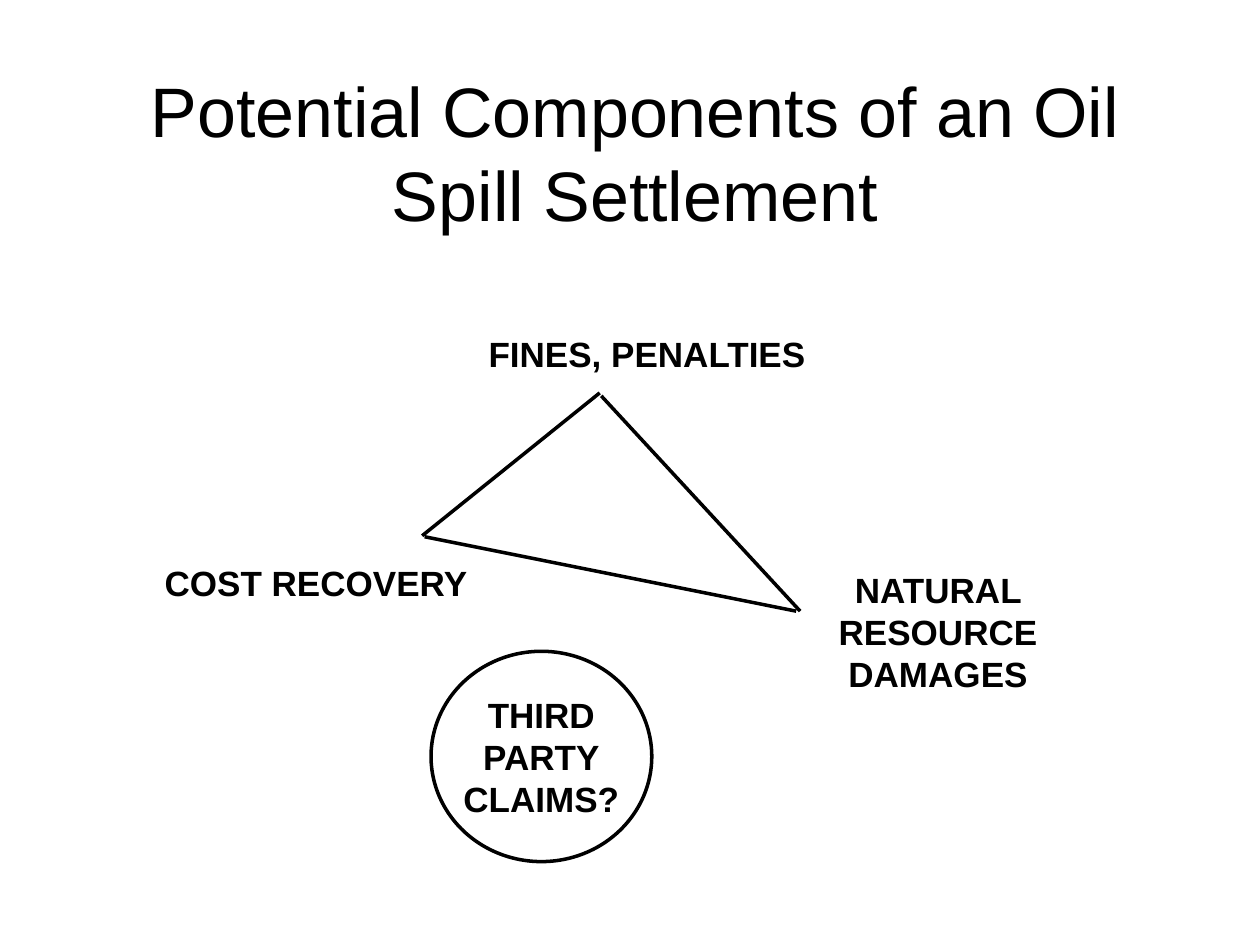
from dataclasses import dataclass

from lxml import etree
from pptx import Presentation
from pptx.dml.color import RGBColor
from pptx.enum.shapes import MSO_CONNECTOR, MSO_SHAPE
from pptx.enum.text import MSO_ANCHOR as Anchor, PP_ALIGN as Align
from pptx.oxml.ns import qn
from pptx.util import Cm, Pt


@dataclass(frozen=True)
class Theme:
    font: str = "Arial"
    ink: RGBColor = RGBColor(0, 0, 0)
    paper: RGBColor = RGBColor(255, 255, 255)
    title_size: Pt = Pt(40)
    label_size: Pt = Pt(20)
    line_width: Pt = Pt(2)


THEME = Theme()


def write_text(shape, lines, size, bold=True, align=Align.CENTER,
               anchor=Anchor.TOP, wrap=True):
    """Fill a shape with one paragraph per line, all in the same style."""
    frame = shape.text_frame
    frame.word_wrap = wrap
    frame.vertical_anchor = anchor
    frame.text = "\n".join(lines)
    for para in frame.paragraphs:
        para.alignment = align
        para.font.name = THEME.font
        para.font.size = size
        para.font.bold = bold
        para.font.color.rgb = THEME.ink


deck = Presentation()
deck.slide_width, deck.slide_height = Cm(25.4), Cm(19.05)
page = deck.slides.add_slide(deck.slide_layouts[6])
page.background.fill.solid()
page.background.fill.fore_color.rgb = THEME.paper

title = page.shapes.add_textbox(Cm(1.37), Cm(1.47), Cm(22.86), Cm(3.18))
write_text(title, ["Potential Components of an Oil Spill Settlement"],
           THEME.title_size, bold=False, anchor=Anchor.MIDDLE)

# Labels at the triangle's corners: text, left, top, width, height, align, wrap
corner_labels = [
    ("FINES, PENALTIES", 9.6, 6.58, 6.96, 1.09, Align.LEFT, False),
    ("COST RECOVERY", 3.07, 11.2, 6.63, 1.09, Align.LEFT, False),
    ("NATURAL RESOURCE DAMAGES", 15.01, 11.33, 7.8, 2.79, Align.CENTER, True),
]
for text, left, top, width, height, align, wrap in corner_labels:
    label = page.shapes.add_textbox(Cm(left), Cm(top), Cm(width), Cm(height))
    write_text(label, [text], THEME.label_size, align=align, wrap=wrap)

# Triangle sides: start x, start y, end x, end y
triangle_sides = [
    (12.09, 7.92, 8.51, 10.8),
    (12.12, 7.98, 16.13, 12.32),
    (8.56, 10.82, 16.05, 12.32),
]
for ends in triangle_sides:
    side = page.shapes.add_connector(MSO_CONNECTOR.STRAIGHT, *map(Cm, ends))
    side.line.color.rgb = THEME.ink
    side.line.width = THEME.line_width
    etree.SubElement(side.element.spPr, qn("a:effectLst"))

claims = page.shapes.add_shape(MSO_SHAPE.OVAL, Cm(8.69), Cm(13.13), Cm(4.45), Cm(4.24))
claims.shadow.inherit = False
claims.fill.background()
claims.line.color.rgb = THEME.ink
claims.line.width = THEME.line_width
write_text(claims, ["THIRD", "PARTY", "CLAIMS?"], THEME.label_size,
           anchor=Anchor.MIDDLE, wrap=False)

deck.save("out.pptx")
